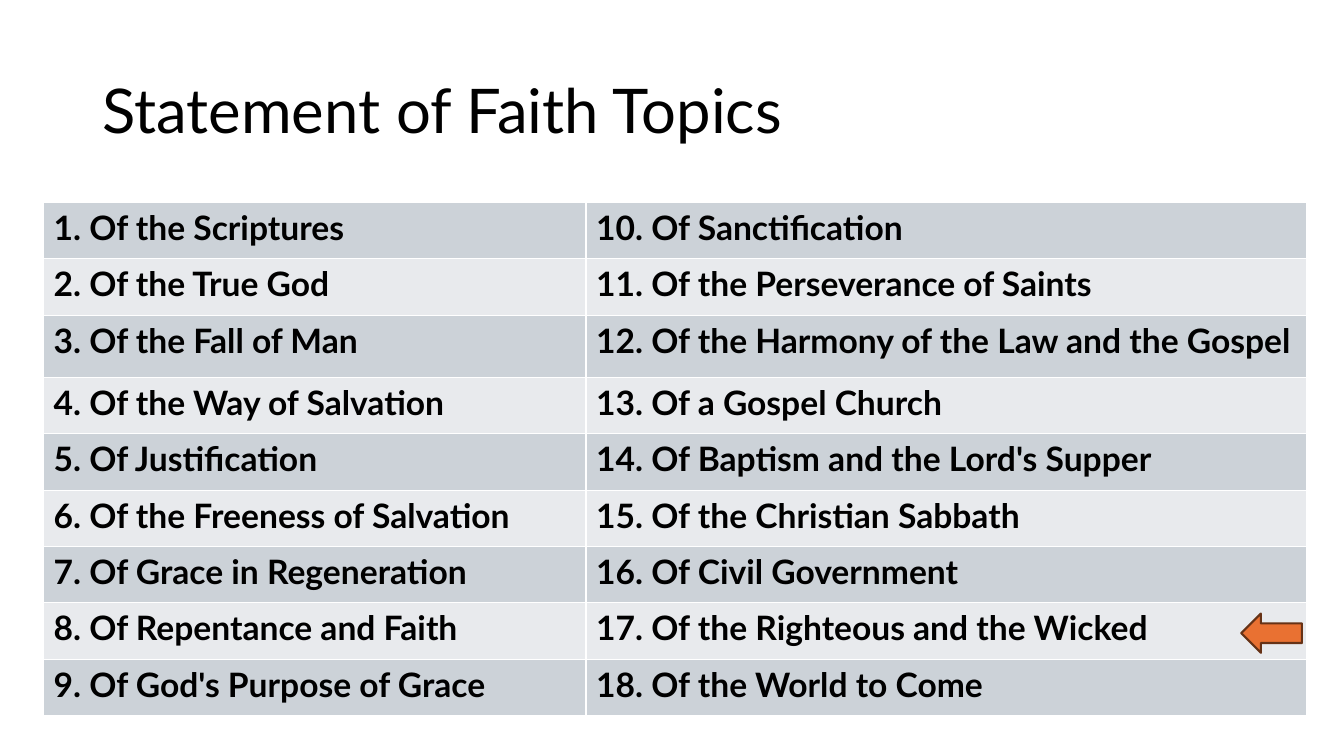
from lxml import etree
from pptx import Presentation
from pptx.dml.color import RGBColor
from pptx.enum.shapes import MSO_SHAPE
from pptx.enum.text import MSO_ANCHOR
from pptx.oxml.ns import qn
from pptx.util import Cm, Pt

ARROW = MSO_SHAPE.RIGHT_ARROW
MIDDLE = MSO_ANCHOR.MIDDLE
FONT = "Lato"
COLORS = {
    "text": "000000",
    "band_dark": "CCD2D8",
    "band_light": "E8EAED",
    "border": "FFFFFF",
    "arrow": "E97132",
    "arrow_line": "663216",
}
TOPICS = [
    "Of the Scriptures",
    "Of the True God",
    "Of the Fall of Man",
    "Of the Way of Salvation",
    "Of Justification",
    "Of the Freeness of Salvation",
    "Of Grace in Regeneration",
    "Of Repentance and Faith",
    "Of God's Purpose of Grace",
    "Of Sanctification",
    "Of the Perseverance of Saints",
    "Of the Harmony of the Law and the Gospel",
    "Of a Gospel Church",
    "Of Baptism and the Lord's Supper",
    "Of the Christian Sabbath",
    "Of Civil Government",
    "Of the Righteous and the Wicked",
    "Of the World to Come",
]
ROWS = 9
COL_WIDTHS = [13.67, 18.16]
ROW_HEIGHT = 1.42
TALL_ROW, TALL_HEIGHT = 2, 1.57
CURRENT_ROW = 7


def rgb(name):
    return RGBColor.from_string(COLORS[name])


def write(tf, text, size=24, bold=False, color="text", spacing=None):
    p = tf.paragraphs[0]
    if spacing:
        p.line_spacing = spacing
    r = p.add_run()
    r.text = text
    r.font.name = FONT
    r.font.size = Pt(size)
    r.font.bold = bold
    r.font.color.rgb = rgb(color)


def add_borders(cell, color="border", width=1):
    tcPr = cell._tc.get_or_add_tcPr()
    for side in ("a:lnL", "a:lnR", "a:lnT", "a:lnB"):
        ln = etree.SubElement(tcPr, qn(side), w=str(Pt(width)))
        fill = etree.SubElement(ln, qn("a:solidFill"))
        etree.SubElement(fill, qn("a:srgbClr"), val=COLORS[color])


def add_title(s, x, y, w, h):
    tf = s.shapes.add_textbox(Cm(x), Cm(y), Cm(w), Cm(h)).text_frame
    tf.word_wrap = True
    tf.vertical_anchor = MIDDLE
    write(tf, "Statement of Faith Topics", size=44, spacing=0.9)


def add_topics(s, x, y, w, h):
    cols = len(COL_WIDTHS)
    table = s.shapes.add_table(ROWS, cols, Cm(x), Cm(y), Cm(w), Cm(h)).table
    table.first_row = False
    for col, width in zip(table.columns, COL_WIDTHS):
        col.width = Cm(width)
    for i, row in enumerate(table.rows):
        row.height = Cm(TALL_HEIGHT if i == TALL_ROW else ROW_HEIGHT)
    for i, topic in enumerate(TOPICS):
        col, row = divmod(i, ROWS)
        cell = table.cell(row, col)
        add_borders(cell)
        cell.fill.solid()
        cell.fill.fore_color.rgb = rgb("band_light" if row % 2 else "band_dark")
        write(cell.text_frame, f"{i + 1}. {topic}", bold=True)


def add_marker(s, x, y, w, h):
    aw, ah = 1.53, 0.99
    row_top = y + CURRENT_ROW * ROW_HEIGHT + TALL_HEIGHT - ROW_HEIGHT
    sp = s.shapes.add_shape(ARROW, Cm(x + w - aw - 0.12), Cm(row_top + 0.27),
                            Cm(aw), Cm(ah))
    sp.rotation = 180
    sp.shadow.inherit = False
    sp.fill.solid()
    sp.fill.fore_color.rgb = rgb("arrow")
    sp.line.color.rgb = rgb("arrow_line")
    sp.line.width = Pt(1.5)


def main():
    prs = Presentation()
    prs.slide_width, prs.slide_height = Cm(33.87), Cm(19.05)
    s = prs.slides.add_slide(prs.slide_layouts[6])
    add_title(s, 2.33, 1.01, 29.21, 3.68)
    grid = (1.1, 5.1, sum(COL_WIDTHS), (ROWS - 1) * ROW_HEIGHT + TALL_HEIGHT)
    add_topics(s, *grid)
    add_marker(s, *grid)
    prs.save("out.pptx")


if __name__ == "__main__":
    main()
